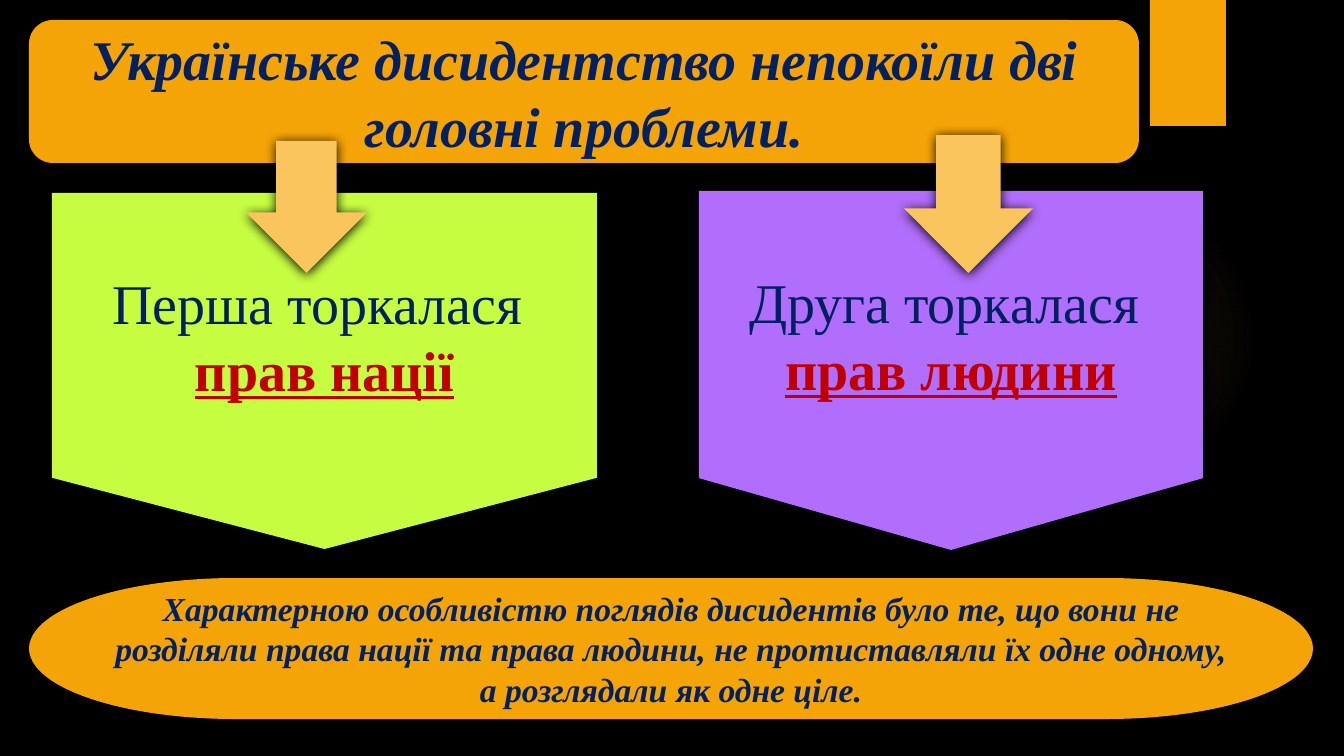
from dataclasses import dataclass

from lxml import etree
from pptx import Presentation
from pptx.dml.color import RGBColor
from pptx.enum.shapes import MSO_SHAPE
from pptx.enum.text import MSO_ANCHOR, PP_ALIGN
from pptx.oxml import parse_xml
from pptx.oxml.ns import nsdecls, qn
from pptx.util import Emu, Pt

RECT = MSO_SHAPE.RECTANGLE
ROUNDED = MSO_SHAPE.ROUNDED_RECTANGLE
OVAL = MSO_SHAPE.OVAL
PENTAGON = MSO_SHAPE.FLOWCHART_OFFPAGE_CONNECTOR
TERMINATOR = MSO_SHAPE.FLOWCHART_TERMINATOR
DOWN_ARROW = MSO_SHAPE.DOWN_ARROW
MIDDLE = MSO_ANCHOR.MIDDLE
CENTER = PP_ALIGN.CENTER

SLIDE_W, SLIDE_H = 1344, 756
PX_PER_INCH = 100.8


@dataclass(frozen=True)
class Theme:
    font: str = "Times New Roman"
    background: str = "000000"
    orange: str = "F5A408"
    pale_orange: str = "FAC55C"
    glow: str = "FAC96A"
    lime: str = "C7FD41"
    violet: str = "B16DFB"
    navy: str = "002060"
    red: str = "C00000"
    large: int = 40
    small: int = 24


THEME = Theme()


@dataclass(frozen=True)
class Shadow:
    opacity: int
    blur: float
    distance: float


SOFT = Shadow(45, 3, 2)
STRONG = Shadow(100, 8.5, 1)


@dataclass(frozen=True)
class Line:
    text: str
    size: int = THEME.large
    color: str = THEME.navy
    bold: bool = False
    italic: bool = False
    underline: bool = False


@dataclass(frozen=True)
class Block:
    preset: MSO_SHAPE
    box: tuple[int, int, int, int]
    fill: str
    shadow: Shadow = STRONG
    lines: tuple[Line, ...] = ()


def statement(text: str, size: int) -> Line:
    return Line(text, size, bold=True, italic=True)


def problem(preface: str, subject: str) -> tuple[Line, Line]:
    return Line(preface), Line(subject, color=THEME.red, bold=True, underline=True)


BLOCKS = (
    # Corner tab
    Block(RECT, (1150, 0, 76, 126), THEME.orange, SOFT),
    # Title
    Block(ROUNDED, (29, 20, 1110, 143), THEME.orange, lines=(
        statement("Українське дисидентство непокоїли дві головні проблеми.", THEME.large),)),
    # Two problems
    Block(PENTAGON, (52, 193, 545, 356), THEME.lime,
          lines=problem("Перша торкалася ", "прав нації")),
    Block(PENTAGON, (699, 191, 504, 359), THEME.violet,
          lines=problem("Друга торкалася ", "прав людини")),
    # Conclusion
    Block(TERMINATOR, (29, 578, 1284, 141), THEME.orange, lines=(
        statement("Характерною особливістю поглядів дисидентів було те, що вони не розділяли "
                  "права нації та права людини, не протиставляли їх одне одному,", THEME.small),
        statement("а розглядали як одне ціле.", THEME.small))),
    # Arrows from the title to the problems
    Block(DOWN_ARROW, (246, 141, 121, 132), THEME.pale_orange),
    Block(DOWN_ARROW, (904, 135, 129, 138), THEME.pale_orange),
)


def px(value: int) -> Emu:
    return Emu(round(value * 914400 / PX_PER_INCH))


def add_outline(slide, preset: MSO_SHAPE, box: tuple[int, int, int, int]):
    sp = slide.shapes.add_shape(preset, *map(px, box))
    sp.shadow.inherit = False
    sp.line.fill.background()
    return sp


def add_shadow(sp, shadow: Shadow) -> None:
    effects = sp._element.spPr.find(qn("a:effectLst"))
    outer = etree.SubElement(effects, qn("a:outerShdw"), blurRad=str(Pt(shadow.blur)),
                             dist=str(Pt(shadow.distance)), dir="5400000",
                             algn="ctr", rotWithShape="0")
    color = etree.SubElement(outer, qn("a:srgbClr"), val="000000")
    etree.SubElement(color, qn("a:alpha"), val=str(shadow.opacity * 1000))


def add_glow(slide) -> None:
    sp = add_outline(slide, OVAL, (949, 184, 310, 310))
    stops = "".join(
        f'<a:gs pos="{pos * 1000}"><a:srgbClr val="{THEME.glow}">'
        f'<a:alpha val="{alpha * 1000}"/></a:srgbClr></a:gs>'
        for pos, alpha in ((0, 7), (36, 6), (69, 0)))
    gradient = parse_xml(
        f'<a:gradFill {nsdecls("a")}><a:gsLst>{stops}</a:gsLst><a:path path="circle">'
        '<a:fillToRect l="50000" t="50000" r="50000" b="50000"/></a:path></a:gradFill>')
    sp._element.spPr.find(qn("a:prstGeom")).addnext(gradient)


def add_block(slide, block: Block) -> None:
    sp = add_outline(slide, block.preset, block.box)
    sp.fill.solid()
    sp.fill.fore_color.rgb = RGBColor.from_string(block.fill)
    add_shadow(sp, block.shadow)
    if not block.lines:
        return
    tf = sp.text_frame
    tf.word_wrap = True
    tf.vertical_anchor = MIDDLE
    tf.text = "\n".join(line.text for line in block.lines)
    for p, line in zip(tf.paragraphs, block.lines):
        p.alignment = CENTER
        for r in p.runs:
            r.font.name = THEME.font
            r.font.size = Pt(line.size)
            r.font.color.rgb = RGBColor.from_string(line.color)
            r.font.bold = line.bold
            r.font.italic = line.italic
            r.font.underline = line.underline


def main() -> None:
    prs = Presentation()
    prs.slide_width, prs.slide_height = px(SLIDE_W), px(SLIDE_H)
    slide = prs.slides.add_slide(prs.slide_layouts[6])
    background = slide.background.fill
    background.solid()
    background.fore_color.rgb = RGBColor.from_string(THEME.background)
    add_glow(slide)
    for block in BLOCKS:
        add_block(slide, block)
    prs.save("out.pptx")


if __name__ == "__main__":
    main()
